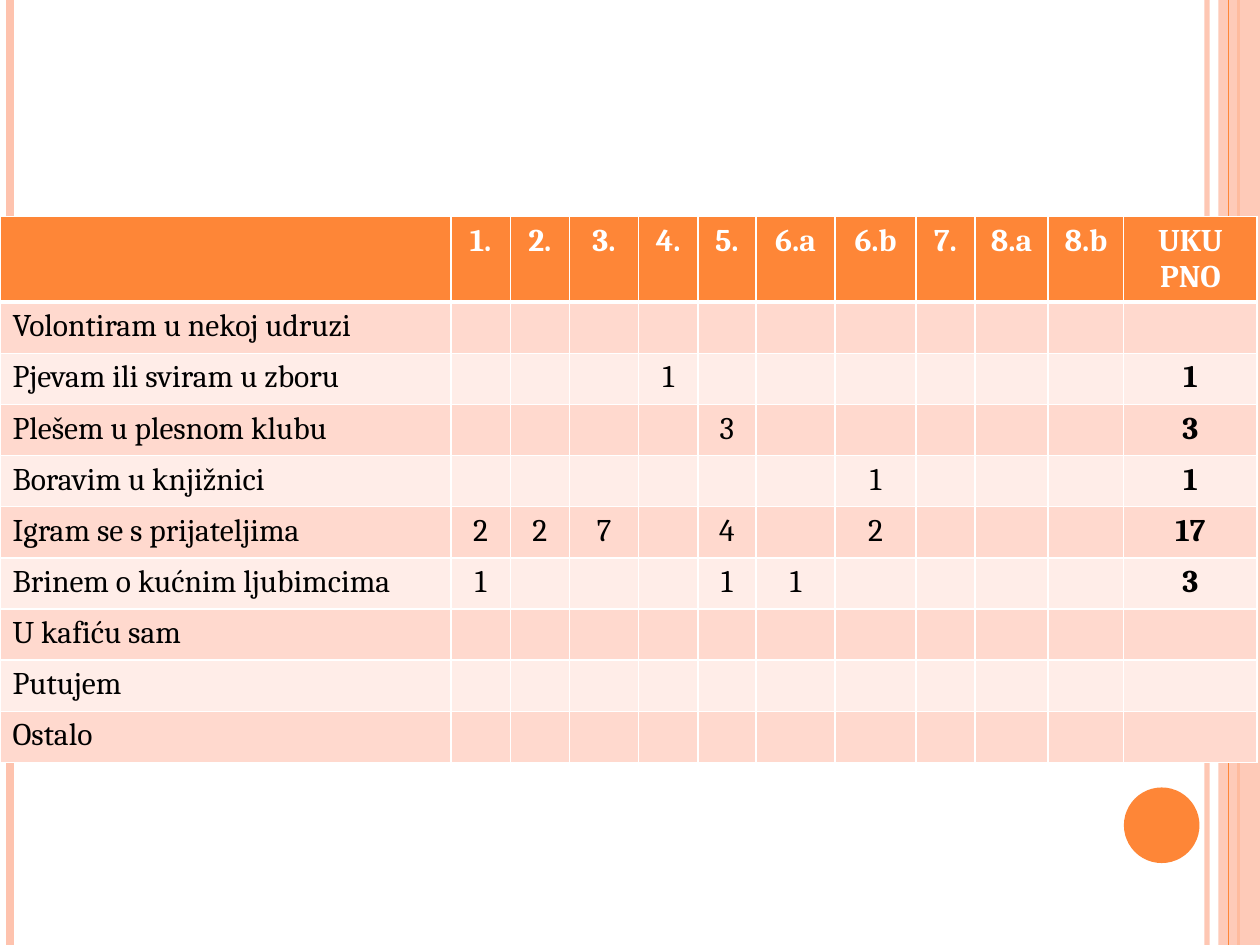
from lxml import etree
from pptx import Presentation
from pptx.dml.color import RGBColor
from pptx.enum.shapes import MSO_CONNECTOR, MSO_SHAPE
from pptx.enum.text import PP_ALIGN
from pptx.oxml.ns import qn
from pptx.util import Inches, Pt

STRAIGHT = MSO_CONNECTOR.STRAIGHT
RECTANGLE = MSO_SHAPE.RECTANGLE
OVAL = MSO_SHAPE.OVAL
LEFT = PP_ALIGN.LEFT
CENTER = PP_ALIGN.CENTER

FONT = "Cambria"
ORANGE = "FE8637"
PEACH = "FEC3AE"
WHITE = "FFFFFF"
BLACK = "000000"
BAND_COLORS = ("FFD9CE", "FFEDE8")

COLUMN_WIDTHS = (3.58, 0.47, 0.47, 0.55, 0.47, 0.46, 0.63, 0.64, 0.47, 0.58, 0.6, 1.06)
CLASSES = ("1.", "2.", "3.", "4.", "5.", "6.a", "6.b", "7.", "8.a", "8.b")
TOTAL = "UKU\nPNO"
ACTIVITIES = (
    ("Volontiram u nekoj udruzi", {}),
    ("Pjevam ili sviram u zboru", {"4.": "1", TOTAL: "1"}),
    ("Plešem u plesnom klubu", {"5.": "3", TOTAL: "3"}),
    ("Boravim u knjižnici", {"6.b": "1", TOTAL: "1"}),
    ("Igram se s prijateljima",
     {"1.": "2", "2.": "2", "3.": "7", "5.": "4", "6.b": "2", TOTAL: "17"}),
    ("Brinem o kućnim ljubimcima", {"1.": "1", "5.": "1", "6.a": "1", TOTAL: "3"}),
    ("U kafiću sam", {}),
    ("Putujem", {}),
    ("Ostalo", {}),
)


def rgb(value):
    return RGBColor.from_string(value)


def set_opacity(element, percent):
    color = next(element.iter(qn("a:srgbClr")))
    etree.SubElement(color, qn("a:alpha"), val=str(percent * 1000))


def add_stripe(slide, x, color, width, opacity=100):
    stripe = slide.shapes.add_connector(
        STRAIGHT, Inches(x), Inches(0), Inches(x), Inches(7.5))
    stripe.line.color.rgb = rgb(color)
    stripe.line.width = Pt(width)
    properties = stripe._element.spPr
    if opacity < 100:
        set_opacity(properties, opacity)
    etree.SubElement(properties, qn("a:effectLst"))


def add_block(slide, kind, left, top, width, height, color, opacity=100):
    block = slide.shapes.add_shape(
        kind, Inches(left), Inches(top), Inches(width), Inches(height))
    block.shadow.inherit = False
    block.fill.solid()
    block.fill.fore_color.rgb = rgb(color)
    block.line.fill.background()
    if opacity < 100:
        set_opacity(block._element.spPr, opacity)


def set_borders(cell, bottom_width):
    properties = cell._tc.get_or_add_tcPr()
    for side, width in (("L", 1), ("R", 1), ("T", 1), ("B", bottom_width)):
        border = etree.SubElement(properties, qn(f"a:ln{side}"), w=str(Pt(width)))
        fill = etree.SubElement(border, qn("a:solidFill"))
        etree.SubElement(fill, qn("a:srgbClr"), val=WHITE)


def write_cell(cell, text, color, bold, alignment):
    for index, line in enumerate(text.split("\n")):
        frame = cell.text_frame
        paragraph = frame.add_paragraph() if index else frame.paragraphs[0]
        paragraph.alignment = alignment
        run = paragraph.add_run()
        run.text = line
        run.font.name = FONT
        run.font.size = Pt(18)
        run.font.bold = bold
        run.font.color.rgb = rgb(color)


def add_activity_table(slide):
    headings = CLASSES + (TOTAL,)
    rows = [("",) + headings]
    for activity, counts in ACTIVITIES:
        rows.append([activity] + [counts.get(heading, "") for heading in headings])

    table = slide.shapes.add_table(
        len(rows), len(COLUMN_WIDTHS),
        Inches(0), Inches(1.72), Inches(10), Inches(4.06)).table
    for column, width in zip(table.columns, COLUMN_WIDTHS):
        column.width = Inches(width)

    for row_index, row in enumerate(rows):
        is_header = row_index == 0
        background = ORANGE if is_header else BAND_COLORS[(row_index - 1) % 2]
        for column_index, text in enumerate(row):
            cell = table.cell(row_index, column_index)
            set_borders(cell, 3 if is_header else 1)
            cell.fill.solid()
            cell.fill.fore_color.rgb = rgb(background)
            if text:
                is_total = column_index == len(headings)
                write_cell(cell, text, WHITE if is_header else BLACK,
                           is_header or is_total, CENTER if column_index else LEFT)


def main():
    presentation = Presentation()
    presentation.slide_width = Inches(10)
    presentation.slide_height = Inches(7.5)
    slide = presentation.slides.add_slide(presentation.slide_layouts[6])

    add_stripe(slide, 9.58, PEACH, 3, 93)
    add_stripe(slide, 0.08, PEACH, 4.5)
    add_stripe(slide, 9.83, ORANGE, 1.5)
    add_block(slide, RECTANGLE, 9.67, 0, 0.33, 7.5, PEACH, 87)
    add_stripe(slide, 9.75, ORANGE, 0.75)
    add_block(slide, OVAL, 8.92, 6.25, 0.6, 0.6, ORANGE)
    add_activity_table(slide)

    presentation.save("out.pptx")


if __name__ == "__main__":
    main()
